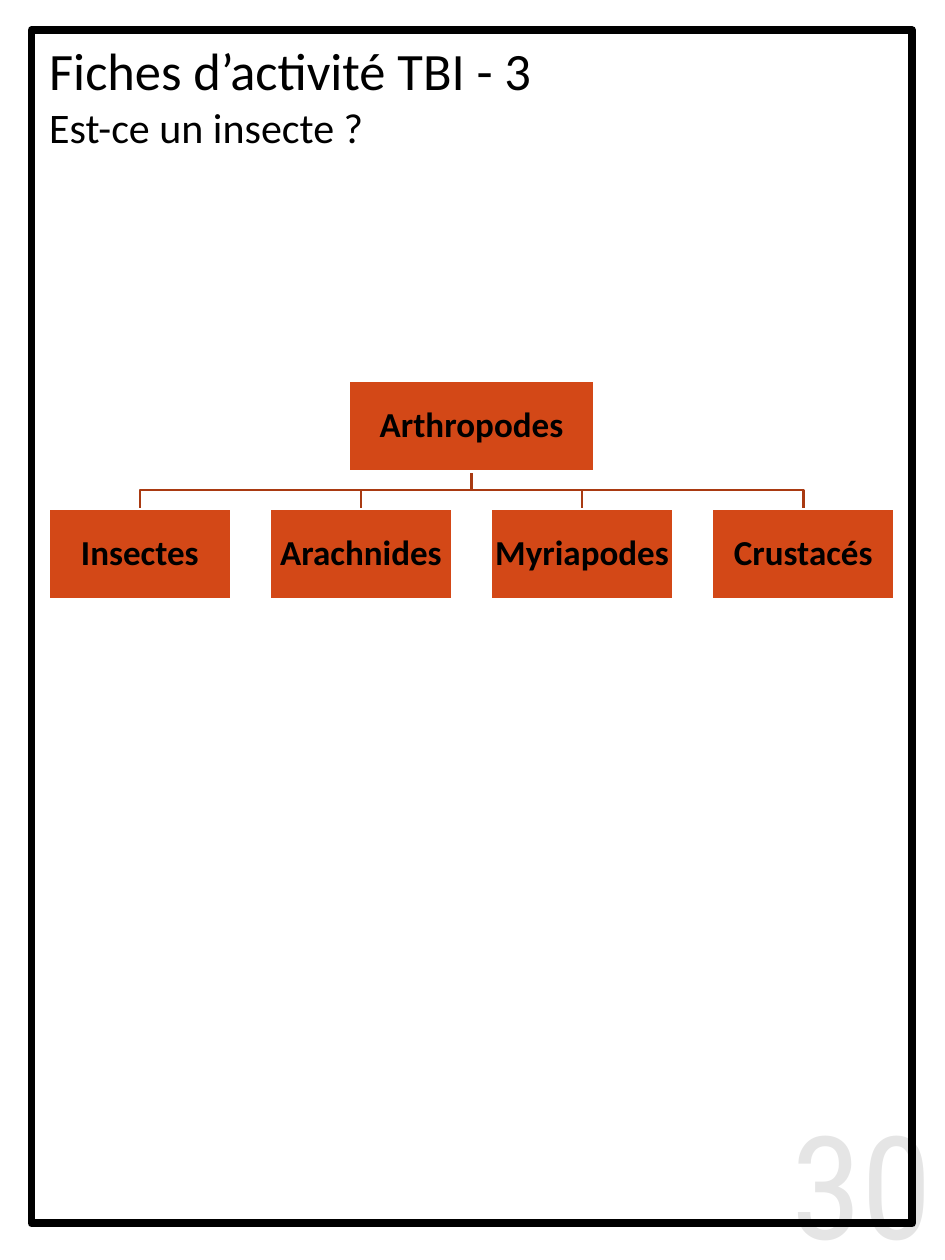
"""Build the arthropod classification activity page."""
from dataclasses import dataclass

import pptx
import pptx.dml.color
import pptx.enum.shapes
import pptx.enum.text
import pptx.oxml
import pptx.oxml.ns
import pptx.util

COLORS = {"ink": "000000", "paper": "FFFFFF", "node": "D34817", "link": "A93A12"}
PAGE_WIDTH, PAGE_HEIGHT = 7.5, 10
FIRST_CENTRE, COLUMN_PITCH = 1.11, 1.755
FIRST_TOP, ROW_PITCH, NODE_HEIGHT = 3.02, 1.02, 0.72
LEFT = pptx.enum.text.PP_ALIGN.LEFT
CENTER = pptx.enum.text.PP_ALIGN.CENTER
RIGHT = pptx.enum.text.PP_ALIGN.RIGHT
MIDDLE = pptx.enum.text.MSO_ANCHOR.MIDDLE


@dataclass(frozen=True)
class Node:
    """A box of the tree, placed by grid column and row."""
    label: str
    column: float
    row: int
    width: float = 1.45

    @property
    def centre(self) -> float:
        return FIRST_CENTRE + self.column * COLUMN_PITCH

    @property
    def top(self) -> float:
        return FIRST_TOP + self.row * ROW_PITCH


ROOT = Node("Arthropodes", 1.5, 0, 1.95)
GROUPS = [Node(label, column, 1) for column, label in
          enumerate(["Insectes", "Arachnides", "Myriapodes", "Crustacés"])]


def color(name: str) -> pptx.dml.color.RGBColor:
    """Return a palette colour."""
    return pptx.dml.color.RGBColor.from_string(COLORS[name])


def outline(shape, name: str, width: float) -> None:
    """Give a shape a plain line without shadow."""
    shape.shadow.inherit = False
    shape.line.color.rgb = color(name)
    shape.line.width = pptx.util.Pt(width)


def write(paragraph, text: str, size: float, font: str = "Calibri",
          align=LEFT, bold: bool = False) -> None:
    """Fill a paragraph with uniformly formatted text."""
    paragraph.text = text
    paragraph.alignment = align
    paragraph.font.size = pptx.util.Pt(size)
    paragraph.font.name = font
    paragraph.font.bold = bold
    paragraph.font.color.rgb = color("ink")


def add_rectangle(page, left: float, top: float, width: float, height: float):
    """Add a rectangle measured in inches."""
    return page.shapes.add_shape(
        pptx.enum.shapes.MSO_SHAPE.RECTANGLE,
        *map(pptx.util.Inches, (left, top, width, height)))


def add_frame(page) -> None:
    """Draw the border around the page."""
    frame = add_rectangle(page, 0.25, 0.24, 6.99, 9.47)
    frame.fill.background()
    outline(frame, "ink", 4.5)


def add_heading(page) -> None:
    """Place the title with its question below."""
    title = page.shapes.title
    title.left, title.top, title.width, title.height = map(
        pptx.util.Inches, (0.29, 0.28, 5.43, 0.95))
    frame = title.text_frame
    frame.auto_size = pptx.enum.text.MSO_AUTO_SIZE.NONE
    frame.vertical_anchor = MIDDLE
    write(frame.paragraphs[0], "Fiches d’activité TBI - 3", 30)
    write(frame.add_paragraph(), "Est-ce un insecte ?", 24)


def add_page_number(page, number: str) -> None:
    """Set the large translucent page number in the corner."""
    width, height = 2.19, 1.24
    box = page.shapes.add_textbox(*map(pptx.util.Inches, (
        PAGE_WIDTH - width, PAGE_HEIGHT - height, width, height)))
    box.text_frame.word_wrap = True
    box.text_frame.vertical_anchor = MIDDLE
    paragraph = box.text_frame.paragraphs[0]
    write(paragraph, number, 82, "Roboto Condensed", RIGHT)
    for fill in paragraph._p.iter(pptx.oxml.ns.qn("a:srgbClr")):
        alpha = pptx.oxml.parse_xml(
            f'<a:alpha {pptx.oxml.ns.nsdecls("a")} val="10000"/>')
        fill.append(alpha)


def add_link(page, parent: Node, child: Node) -> None:
    """Draw the stepped line from a parent to its child."""
    start = parent.top + NODE_HEIGHT
    bend = (start + child.top) / 2
    points = [(parent.centre, start), (parent.centre, bend),
              (child.centre, bend), (child.centre, child.top)]
    steps = [tuple(map(pptx.util.Inches, point)) for point in points]
    builder = page.shapes.build_freeform(*steps[0])
    builder.add_line_segments(steps[1:], close=False)
    link = builder.convert_to_shape()
    link.fill.background()
    outline(link, "link", 1.5)


def add_node(page, node: Node) -> None:
    """Draw a labelled box of the tree."""
    box = add_rectangle(page, node.centre - node.width / 2, node.top,
                        node.width, NODE_HEIGHT)
    box.fill.solid()
    box.fill.fore_color.rgb = color("node")
    outline(box, "paper", 1.5)
    frame = box.text_frame
    frame.word_wrap = True
    frame.vertical_anchor = MIDDLE
    frame.margin_left = frame.margin_right = pptx.util.Inches(0.01)
    frame.margin_top = frame.margin_bottom = pptx.util.Inches(0.01)
    write(frame.paragraphs[0], node.label, 20, align=CENTER, bold=True)
    frame.paragraphs[0].line_spacing = 0.9


def main() -> None:
    """Assemble and save the deck."""
    deck = pptx.Presentation()
    deck.slide_width = pptx.util.Inches(PAGE_WIDTH)
    deck.slide_height = pptx.util.Inches(PAGE_HEIGHT)
    page = deck.slides.add_slide(deck.slide_layouts[5])
    add_frame(page)
    add_heading(page)
    add_page_number(page, "30")
    for group in GROUPS:
        add_link(page, ROOT, group)
    for node in [ROOT, *GROUPS]:
        add_node(page, node)
    deck.save("out.pptx")


if __name__ == "__main__":
    main()
